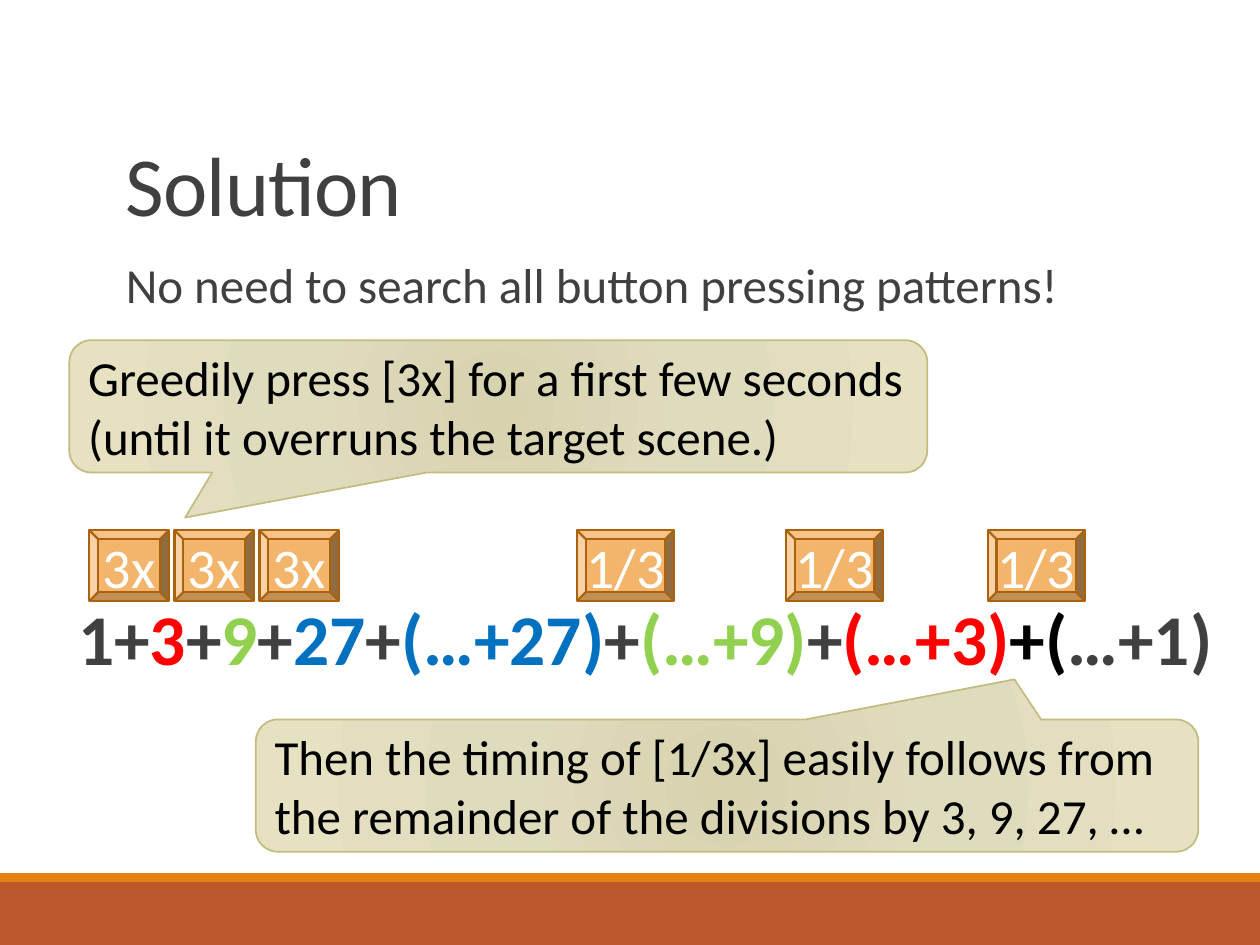
from pptx import Presentation
from pptx.dml.color import RGBColor as RGB
from pptx.enum.shapes import MSO_SHAPE as SHAPE
from pptx.enum.text import MSO_ANCHOR as ANCHOR, PP_ALIGN as ALIGN
from pptx.oxml import parse_xml
from pptx.oxml.ns import nsdecls
from pptx.util import Inches, Pt

W, H = 10, 7.5
FONT = "Calibri"
WHITE, BLACK = RGB(255, 255, 255), RGB(0, 0, 0)
GREY = RGB(0x40, 0x40, 0x40)
RUST, ORANGE = RGB(0xBD, 0x58, 0x2C), RGB(0xE4, 0x83, 0x12)
KEY_FILL, KEY_LINE = RGB(0xF3, 0xB5, 0x6C), RGB(0xAB, 0x62, 0x0D)
KHAKI_LINE = RGB(0xC2, 0xBC, 0x80)
KHAKI_STOPS = ((0, RGB(0xD7, 0xD3, 0xAF)), (45, RGB(0xDF, 0xDB, 0xBD)),
               (100, RGB(0xE5, 0xE1, 0xC1)))
RED, GREEN, BLUE = RGB(255, 0, 0), RGB(0x92, 0xD0, 0x50), RGB(0, 0x70, 0xC0)

# Button row
KEY_TOP, KEY_H = 4.21, 0.56
TRIPLE_LEFT, TRIPLE_W, TRIPLE_STEP = 0.71, 0.63, 0.675
THIRD_LEFTS, THIRD_W = (4.58, 6.24, 7.84), 0.77

FORMULA = (("1+", GREY), ("3", RED), ("+", GREY), ("9", GREEN), ("+", GREY),
           ("27", BLUE), ("+", GREY), ("(…+27)", BLUE), ("+", GREY),
           ("(…+9)", GREEN), ("+", GREY), ("(…+3)", RED), ("+(", BLACK),
           ("…+1)", GREY))


def box(*lengths):
    return [Inches(n) for n in lengths]


def style(p, size, color, bold=False):
    p.font.name, p.font.size, p.font.bold = FONT, Pt(size), bold
    p.font.color.rgb = color


def add_shape(slide, kind, at, fill=None, line=None, width=1):
    s = slide.shapes.add_shape(kind, *box(*at))
    s.shadow.inherit = False
    if fill is not None:
        s.fill.solid()
        s.fill.fore_color.rgb = fill
    if line is None:
        s.line.fill.background()
    else:
        s.line.color.rgb = line
        s.line.width = Pt(width)
    return s


def add_text(slide, at, parts, size, spacing, bold=False, inset=0):
    """A text box of one paragraph, made of (text, colour) parts."""
    tf = slide.shapes.add_textbox(*box(*at)).text_frame
    tf.word_wrap = True
    tf.margin_left = tf.margin_right = Inches(inset)
    p = tf.paragraphs[0]
    p.line_spacing = spacing
    style(p, size, GREY, bold)
    for text, color in parts:
        r = p.add_run()
        r.text = text
        r.font.color.rgb = color
    return tf


def add_key(slide, left, width, label):
    s = add_shape(slide, SHAPE.BEVEL, (left, KEY_TOP, width, KEY_H),
                  KEY_FILL, KEY_LINE, 1.25)
    tf = s.text_frame
    tf.word_wrap = False
    tf.vertical_anchor = ANCHOR.MIDDLE
    p = tf.paragraphs[0]
    p.text = label
    p.alignment = ALIGN.CENTER
    style(p, 32, WHITE)


def add_callout(slide, at, tip, text):
    s = add_shape(slide, SHAPE.ROUNDED_RECTANGULAR_CALLOUT, at, line=KHAKI_LINE)
    s.adjustments[0], s.adjustments[1] = tip
    # Radial gradient, placed right after the geometry
    stops = "".join(f'<a:gs pos="{pos * 1000}"><a:srgbClr val="{c}"/></a:gs>'
                    for pos, c in KHAKI_STOPS)
    s._element.spPr.insert(2, parse_xml(
        f'<a:gradFill {nsdecls("a")} rotWithShape="1"><a:gsLst>{stops}</a:gsLst>'
        '<a:path path="circle"><a:fillToRect l="100000" t="100000" r="100000"'
        ' b="100000"/></a:path></a:gradFill>'))
    tf = s.text_frame
    tf.word_wrap = True
    tf.vertical_anchor = ANCHOR.MIDDLE
    p = tf.paragraphs[0]
    p.text = text
    p.alignment = ALIGN.LEFT
    style(p, 28, BLACK)


def main():
    prs = Presentation()
    prs.slide_width, prs.slide_height = box(W, H)
    slide = prs.slides.add_slide(prs.slide_layouts[6])

    # Footer bands
    add_shape(slide, SHAPE.RECTANGLE, (0, 7, W, 0.5), RUST)
    add_shape(slide, SHAPE.RECTANGLE, (0, 6.93, W, 0.07), ORANGE)

    # Title and lead sentence
    tf = add_text(slide, (0.9, 0.31, 8.25, 1.59), [("Solution", GREY)],
                  48, 0.85, inset=0.1)
    tf.vertical_anchor = ANCHOR.BOTTOM
    tf.paragraphs[0].runs[0]._r.get_or_add_rPr().set("spc", "-50")
    add_text(slide, (0.9, 2.02, 8.25, 0.56),
             [("No need to search all button pressing patterns!", GREY)],
             28, 0.9, inset=0.1)

    # Formula
    add_text(slide, (0.62, 4.8, 9.08, 0.86), FORMULA, 40.8, 0.8, bold=True)

    # Buttons and the remarks on them
    for i in range(3):
        add_key(slide, TRIPLE_LEFT + i * TRIPLE_STEP, TRIPLE_W, "3x")
    add_callout(slide, (0.55, 2.7, 6.81, 1.05), (-0.365, 0.841),
                "Greedily press [3x] for a first few seconds\v"
                "(until it overruns the target scene.)")
    add_callout(slide, (2.03, 5.71, 7.48, 1.05), (0.305, -0.803),
                "Then the timing of [1/3x] easily follows from "
                "the remainder of the divisions by 3, 9, 27, …")
    for left in THIRD_LEFTS:
        add_key(slide, left, THIRD_W, "1/3")

    prs.save("out.pptx")


if __name__ == "__main__":
    main()
